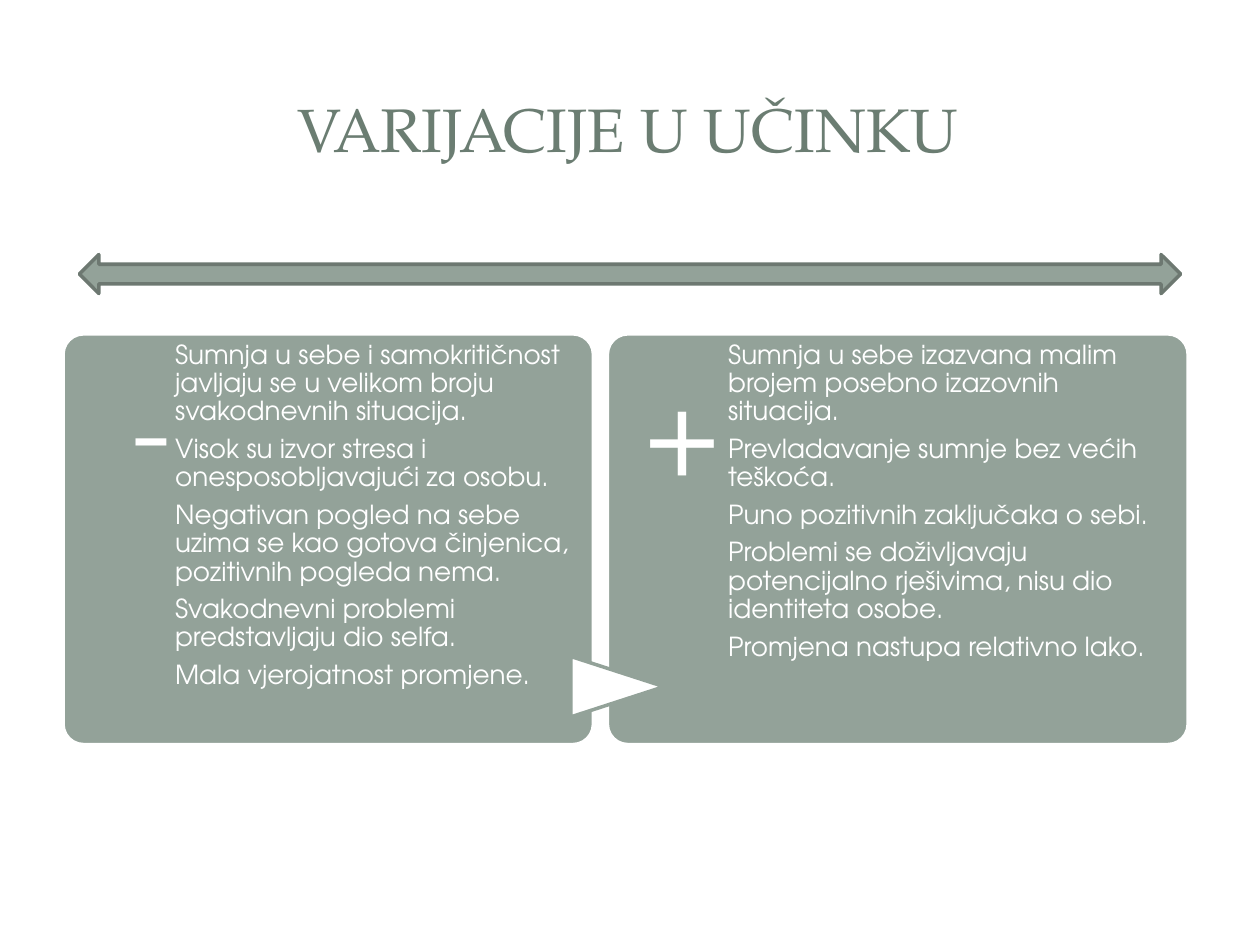
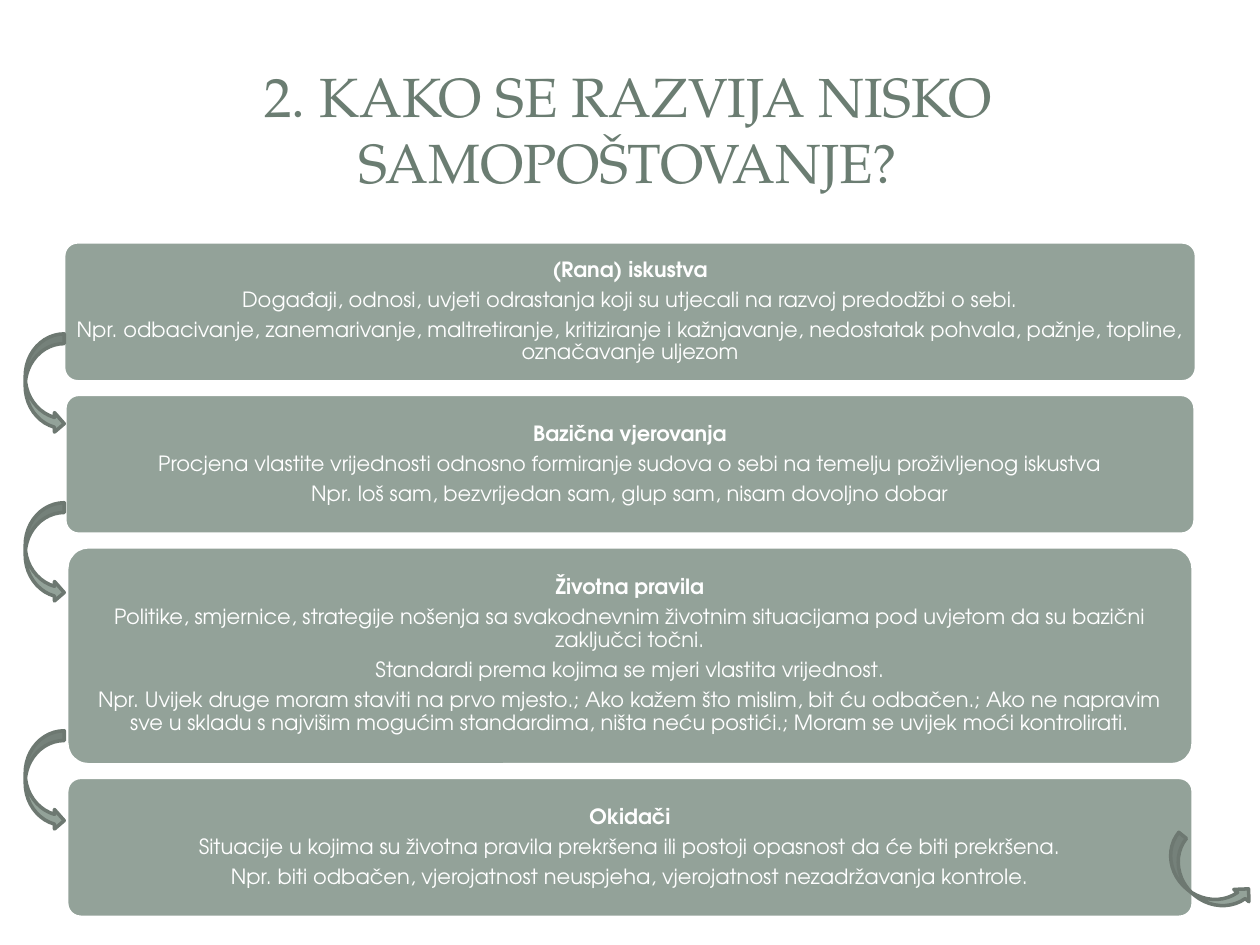
from pptx import Presentation
from pptx.dml.color import RGBColor
from pptx.enum.shapes import MSO_SHAPE
from pptx.enum.text import MSO_ANCHOR, PP_ALIGN
from pptx.util import Inches, Pt

ROUNDED = MSO_SHAPE.ROUNDED_RECTANGLE
DOUBLE_ARROW = MSO_SHAPE.LEFT_RIGHT_ARROW
CURVED_ARROW = MSO_SHAPE.CURVED_RIGHT_ARROW
TRIANGLE = MSO_SHAPE.FLOWCHART_EXTRACT
TOP, MIDDLE = MSO_ANCHOR.TOP, MSO_ANCHOR.MIDDLE
LEFT, CENTER, RIGHT = PP_ALIGN.LEFT, PP_ALIGN.CENTER, PP_ALIGN.RIGHT

COLORS = {"sage": "93A299", "edge": "6D7871", "title": "6B7D72", "white": "FFFFFF"}
TITLE_FONT = "TeX Gyre Pagella"
BODY_FONT = "TeX Gyre Adventor"

MINUS_TRAITS = [
    "Sumnja u sebe i samokritičnost javljaju se u velikom broju svakodnevnih situacija.",
    "Visok su izvor stresa i onesposobljavajući za osobu.",
    "Negativan pogled na sebe uzima se kao gotova činjenica, pozitivnih pogleda nema.",
    "Svakodnevni problemi predstavljaju dio selfa.",
    "Mala vjerojatnost promjene.",
]
PLUS_TRAITS = [
    "Sumnja u sebe izazvana malim brojem posebno izazovnih situacija.",
    "Prevladavanje sumnje bez većih teškoća.",
    "Puno pozitivnih zaključaka o sebi.",
    "Problemi se doživljavaju potencijalno rješivima, nisu dio identiteta osobe.",
    "Promjena nastupa relativno lako.",
]
STAGES = [
    (8.99, 1.11, [
        "(Rana) iskustva",
        "Događaji, odnosi, uvjeti odrastanja koji su utjecali na razvoj predodžbi o sebi.",
        "Npr. odbacivanje, zanemarivanje, maltretiranje, kritiziranje i kažnjavanje, "
        "nedostatak pohvala, pažnje, topline, označavanje uljezom",
    ]),
    (8.97, 1.11, [
        "Bazična vjerovanja",
        "Procjena vlastite vrijednosti odnosno formiranje sudova o sebi na temelju "
        "proživljenog iskustva",
        "Npr. loš sam, bezvrijedan sam, glup sam, nisam dovoljno dobar",
    ]),
    (8.94, 1.73, [
        "Životna pravila",
        "Politike, smjernice, strategije nošenja sa svakodnevnim životnim situacijama "
        "pod uvjetom da su bazični zaključci točni.",
        "Standardi prema kojima se mjeri vlastita vrijednost.",
        "Npr. Uvijek druge moram staviti na prvo mjesto.; Ako kažem što mislim, bit ću "
        "odbačen.; Ako ne napravim sve u skladu s najvišim mogućim standardima, ništa "
        "neću postići.; Moram se uvijek moći kontrolirati.",
    ]),
    (8.94, 1.11, [
        "Okidači",
        "Situacije u kojima su životna pravila prekršena ili postoji opasnost da će biti "
        "prekršena.",
        "Npr. biti odbačen, vjerojatnost neuspjeha, vjerojatnost nezadržavanja kontrole.",
    ]),
]


class Deck:
    def __init__(self):
        self.presentation = Presentation()
        self.presentation.slide_width = Inches(10)
        self.presentation.slide_height = Inches(7.5)
        self.slide = None

    def new_slide(self, title, size):
        self.slide = self.presentation.slides.add_slide(self.presentation.slide_layouts[6])
        heading = self.text((0.47, 0.45, 9.03, 1.14), [title], size, CENTER, MIDDLE, 0.1)
        paragraph = heading.text_frame.paragraphs[0]
        paragraph.line_spacing = 1.0
        paragraph.space_after = Pt(0)
        for run in paragraph.runs:
            run.font.name = TITLE_FONT
            run.font.color.rgb = RGBColor.from_string(COLORS["title"])

    def shape(self, kind, place, fill="sage", line="edge", rotation=0):
        figure = self.slide.shapes.add_shape(kind, *map(Inches, place))
        figure.shadow.inherit = False
        figure.fill.solid()
        figure.fill.fore_color.rgb = RGBColor.from_string(COLORS[fill])
        figure.line.color.rgb = RGBColor.from_string(COLORS[line])
        figure.line.width = Pt(2)
        figure.rotation = rotation
        return figure

    def panel(self, place, corner):
        card = self.shape(ROUNDED, place, line="white")
        card.adjustments[0] = corner
        return card

    def text(self, place, lines, size, align=LEFT, anchor=TOP, inset=0):
        box = self.slide.shapes.add_textbox(*map(Inches, place))
        self.fill_text(box, lines, size, align, anchor, inset)
        return box

    def fill_text(self, holder, lines, size, align, anchor, inset):
        frame = holder.text_frame
        frame.text = "\n".join(lines)
        frame.word_wrap = True
        frame.vertical_anchor = anchor
        frame.margin_left = frame.margin_right = Inches(inset)
        frame.margin_top = frame.margin_bottom = Inches(inset)
        for paragraph in frame.paragraphs:
            paragraph.alignment = align
            paragraph.line_spacing = 0.9
            paragraph.space_after = Pt(0.35 * size)
            for run in paragraph.runs:
                run.font.name = BODY_FONT
                run.font.size = Pt(size)
                run.font.color.rgb = RGBColor.from_string(COLORS["white"])

    def column(self, left, width, sign, sign_width, traits, traits_width):
        self.panel((left, 2.65, width, 3.26), 0.05)
        self.text((left, 2.97, sign_width, 1.1), [sign], 65, RIGHT)
        self.text((left + sign_width + 0.04, 2.71, traits_width, 3.2), traits, 15)

    def stage(self, top, width, height, lines):
        card = self.panel((5 - width / 2, top, width, height), 0.1)
        self.fill_text(card, lines, 12, CENTER, MIDDLE, 0.05)
        card.text_frame.paragraphs[0].runs[0].font.bold = True

    def curve(self, left, top, rotation=0):
        self.shape(CURVED_ARROW, (left, top, 0.31, 0.79), rotation=rotation)


def variations(deck):
    deck.new_slide("VARIJACIJE U UČINKU", 35)
    deck.column(0.5, 4.21, "-", 0.85, MINUS_TRAITS, 3.13)
    deck.column(4.82, 4.61, "+", 0.92, PLUS_TRAITS, 3.44)
    deck.shape(TRIANGLE, (4.66, 5.08, 0.48, 0.74), "white", "sage", 90)
    deck.shape(DOUBLE_ARROW, (0.63, 2.02, 8.74, 0.31))


def development(deck):
    deck.new_slide("2. KAKO SE RAZVIJA NISKO SAMOPOŠTOVANJE?", 31.5)
    top = 1.92
    for width, height, lines in STAGES:
        deck.stage(top, width, height, lines)
        top += height + 0.1
    for curve_top in (2.65, 3.99, 5.8):
        deck.curve(0.2, curve_top)
    deck.curve(9.41, 6.58, 309)


def main():
    deck = Deck()
    variations(deck)
    development(deck)
    deck.presentation.save("out.pptx")


if __name__ == "__main__":
    main()
